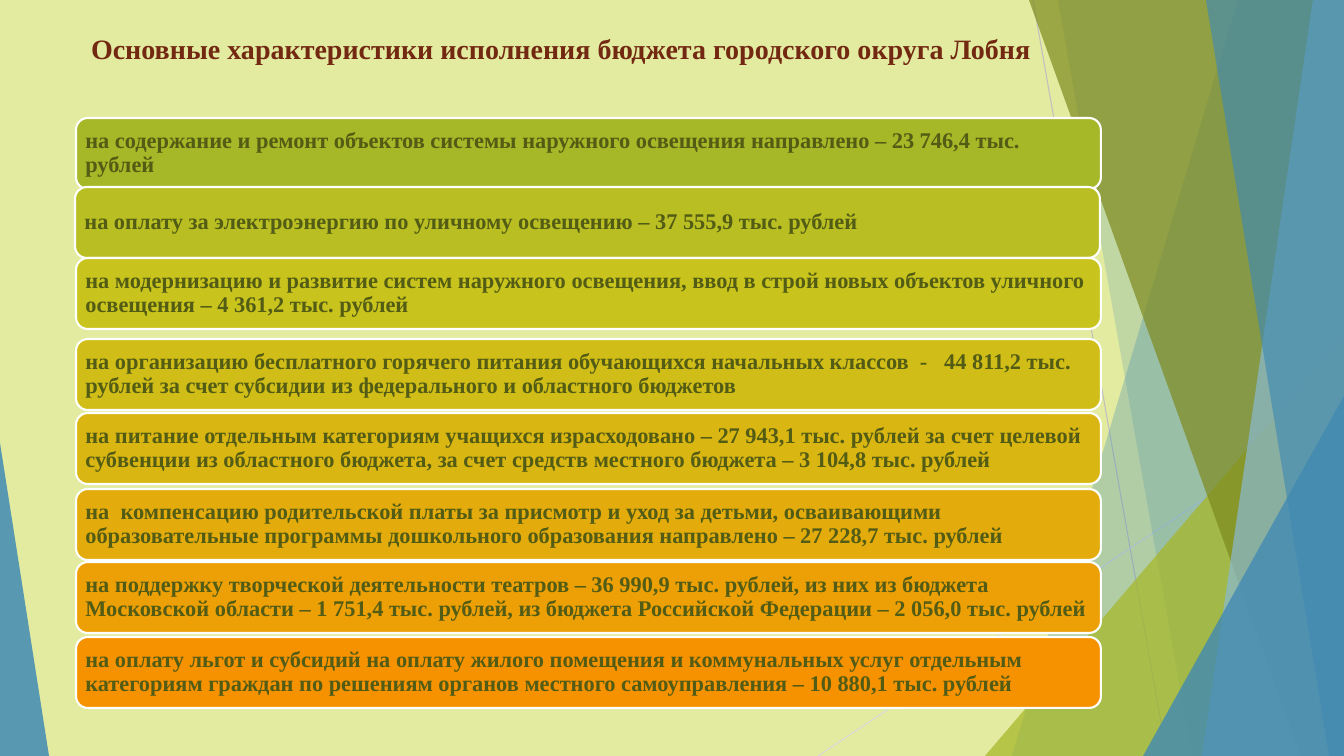
"""Builds the slide on how the Lobnya city district budget was spent."""
from lxml.etree import SubElement
from pptx import Presentation
from pptx.dml.color import RGBColor
from pptx.enum.shapes import MSO_CONNECTOR, MSO_SHAPE
from pptx.enum.text import MSO_ANCHOR, PP_ALIGN
from pptx.oxml.ns import qn
from pptx.util import Pt

WIDTH, HEIGHT = 1344, 756
PX = 12192000 / WIDTH
FONT = "Times New Roman"
COLORS = {
    "background": "E2EBA0", "title": "722811", "item": "535C14", "border": "FFFFFF",
    "blue": "418AB3", "sky": "8ABAD4", "green": "A6B727", "olive": "7D891D",
    "ray": "BFBFBF", "pale ray": "D9D9D9",
}
TITLE = "Основные характеристики исполнения бюджета городского округа Лобня"
TITLE_BOX = (75, 27, 972, 74)

EXPENSES = [
    (76, 118, "A6B727", "на содержание и ремонт объектов системы наружного освещения "
     "направлено – 23 746,4 тыс. рублей"),
    (75, 187, "B9BF22", "на оплату за электроэнергию по уличному освещению – 37 555,9 тыс. рублей"),
    (76, 258, "C8C31D", "на модернизацию и развитие систем наружного освещения, ввод в строй "
     "новых объектов уличного освещения – 4 361,2 тыс. рублей"),
    (76, 339, "D1BD17", "на организацию бесплатного горячего питания обучающихся начальных "
     "классов  -   44 811,2 тыс. рублей за счет субсидии из федерального и областного бюджетов"),
    (76, 413, "DAB612", "на питание отдельным категориям учащихся израсходовано – 27 943,1 тыс. "
     "рублей за счет целевой субвенции из областного бюджета, за счет средств местного "
     "бюджета – 3 104,8 тыс. рублей"),
    (76, 489, "E3AC0C", "на  компенсацию родительской платы за присмотр и уход за детьми, "
     "осваивающими образовательные программы дошкольного образования направлено – "
     "27 228,7 тыс. рублей"),
    (76, 562, "ECA006", "на поддержку творческой деятельности театров – 36 990,9 тыс. рублей, "
     "из них из бюджета Московской области – 1 751,4 тыс. рублей, из бюджета Российской "
     "Федерации – 2 056,0 тыс. рублей"),
    (76, 637, "F69200", "на оплату льгот и субсидий на оплату жилого помещения и коммунальных "
     "услуг отдельным категориям граждан по решениям органов местного самоуправления – "
     "10 880,1 тыс. рублей"),
]
BAR_WIDTH, BAR_HEIGHT = 1025, 71
BAR_INSETS = (6, 3)

RAYS = [((1033, 0, 1167, 756), "ray"), ((1344, 406, 818, 756), "pale ray")]
FACETS = [
    ("band", (1238, 1012), "blue", 30),
    ("band", (1058, 1192), "blue", 20),
    ("triangle", (985, 336, 359, 420, 1), "green", 72),
    ("band", (1029, 1301), "olive", 70),
    ("band", (1313, 1202), "sky", 70),
    ("band", (1206, 1329), "blue", 65),
    ("triangle", (1143, 396, 201, 360, 1), "blue", 80),
    ("triangle", (0, 443, 49, 313, 0), "blue", 85),
]


def px(*lengths):
    return [round(length * PX) for length in lengths]


def rgb(name):
    return RGBColor.from_string(COLORS.get(name, name))


def paint(shape, color):
    shape.shadow.inherit = False
    shape.fill.solid()
    shape.fill.fore_color.rgb = rgb(color)


def draw_ray(shapes, ends, color):
    ray = shapes.add_connector(MSO_CONNECTOR.STRAIGHT, *px(*ends))
    ray.line.color.rgb = rgb(color)
    ray.line.width = Pt(0.75)
    SubElement(ray._element.spPr, qn("a:effectLst"))


def draw_facet(shapes, kind, geometry, color, opacity):
    if kind == "band":
        top, bottom = geometry
        outline = shapes.build_freeform(top, 0, scale=PX)
        outline.add_line_segments([(WIDTH, 0), (WIDTH, HEIGHT), (bottom, HEIGHT)])
        facet = outline.convert_to_shape()
    else:
        *box, apex = geometry
        facet = shapes.add_shape(MSO_SHAPE.ISOSCELES_TRIANGLE, *px(*box))
        facet.adjustments[0] = apex
    paint(facet, color)
    facet.line.fill.background()
    tint = facet._element.spPr.find(qn("a:solidFill"))[0]
    SubElement(tint, qn("a:alpha"), val=str(opacity * 1000))


def write(shape, text, size, color, align, anchor):
    frame = shape.text_frame
    frame.word_wrap = True
    frame.vertical_anchor = anchor
    paragraph = frame.paragraphs[0]
    paragraph.alignment = align
    run = paragraph.add_run()
    run.text = text
    run.font.name = FONT
    run.font.size = Pt(size)
    run.font.bold = True
    run.font.color.rgb = rgb(color)
    return frame


def draw_expense(shapes, left, top, color, text):
    bar = shapes.add_shape(MSO_SHAPE.ROUNDED_RECTANGLE, *px(left, top, BAR_WIDTH, BAR_HEIGHT))
    paint(bar, color)
    bar.line.color.rgb = rgb("border")
    bar.line.width = Pt(1.5)
    frame = write(bar, text, 16, "item", PP_ALIGN.LEFT, MSO_ANCHOR.MIDDLE)
    side, edge = px(*BAR_INSETS)
    frame.margin_left = frame.margin_right = side
    frame.margin_top = frame.margin_bottom = edge
    frame.paragraphs[0].line_spacing = 0.9


def main():
    deck = Presentation()
    deck.slide_width, deck.slide_height = px(WIDTH, HEIGHT)
    slide = deck.slides.add_slide(deck.slide_layouts[6])
    slide.background.fill.solid()
    slide.background.fill.fore_color.rgb = rgb("background")
    for ray in RAYS:
        draw_ray(slide.shapes, *ray)
    for facet in FACETS:
        draw_facet(slide.shapes, *facet)
    title = slide.shapes.add_textbox(*px(*TITLE_BOX))
    write(title, TITLE, 20, "title", PP_ALIGN.CENTER, MSO_ANCHOR.TOP)
    for expense in EXPENSES:
        draw_expense(slide.shapes, *expense)
    deck.save("out.pptx")


if __name__ == "__main__":
    main()
